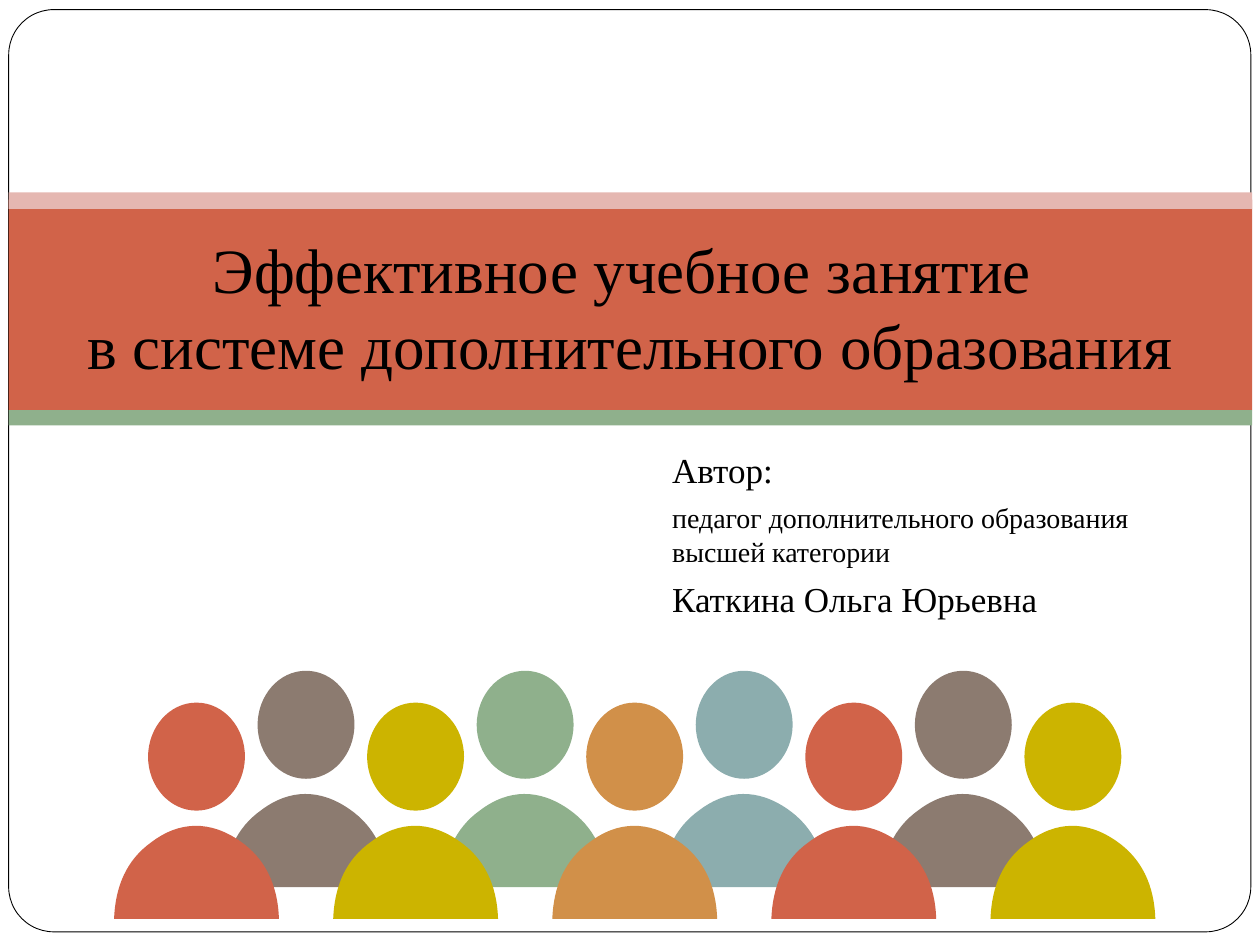
from lxml.etree import SubElement
from pptx import Presentation
from pptx.dml.color import RGBColor
from pptx.enum.shapes import MSO_SHAPE as Kind
from pptx.enum.text import MSO_ANCHOR as Anchor, MSO_AUTO_SIZE as Fit, PP_ALIGN as Align
from pptx.oxml.ns import qn
from pptx.util import Pt

FONT = "Times New Roman"
COLORS = {
    "black": "000000", "white": "FFFFFF", "red": "D16349", "pink": "E5B7B1",
    "green": "8FB08C", "blue": "8CADAE", "brown": "8C7B70",
    "yellow": "CCB400", "orange": "D19049",
}
BACK = ["brown", "green", "blue", "brown"]
FRONT = ["red", "yellow", "orange", "red", "yellow"]
STEP = 62.6  # half the gap between neighbours in one row
# Curves: a start, then two handles and an end for each cubic.
# The arch is measured from its lower left, the head from its upper left.
ARCH = [
    (0, 0), (0.7, -18.7), (7.2, -33.8), (21.4, -43.9),
    (37.6, -56.2), (55.1, -56.2), (71.8, -44.6),
    (86.4, -34.6), (93.6, -19.4), (94.2, 0),
    (62.8, 0), (31.4, 0), (0, 0),
]
HEAD = [
    (27.7, 61.7), (12.6, 61.7), (0, 48), (0, 30.8),
    (0.2, 14), (12.2, 0), (27.7, 0),
    (43.2, 0), (55.4, 14), (55.4, 31),
    (55.2, 48), (42.8, 61.7), (27.7, 61.7),
]


def rgb(name):
    return RGBColor.from_string(COLORS[name])


def paint(shape, color, line=None):
    shape.shadow.inherit = False
    shape.fill.solid()
    shape.fill.fore_color.rgb = rgb(color)
    if line:
        shape.line.color.rgb = rgb(line)
        shape.line.width = Pt(0.5)
    else:
        shape.line.fill.background()


def style(para, size):
    para.font.name = FONT
    para.font.size = Pt(size)
    para.font.color.rgb = rgb("black")


def add_frame(slide, x, y, w, h):
    frame = slide.shapes.add_shape(Kind.ROUNDED_RECTANGLE, Pt(x), Pt(y), Pt(w), Pt(h))
    frame.adjustments[0] = 0.049
    paint(frame, "white", "black")


def add_banner(slide, x, y, w, h):
    """Red band with a pink edge above, a green edge below and the title."""
    bands = [("red", 4, 120.4), ("pink", 0, 9.4), ("green", h - 8.8, 8.8)]
    for color, top, high in bands:
        band = slide.shapes.add_shape(Kind.RECTANGLE, Pt(x), Pt(y + top), Pt(w), Pt(high))
        paint(band, color)

    title = slide.shapes.title
    title.left, title.top, title.width, title.height = Pt(36), Pt(y + 8.8), Pt(648), Pt(116)
    frame = title.text_frame
    frame.text = "Эффективное учебное занятие \vв системе дополнительного образования"
    frame.word_wrap = True
    frame.auto_size = Fit.NONE
    frame.vertical_anchor = Anchor.MIDDLE
    frame.margin_left = frame.margin_right = frame.margin_bottom = Pt(7.2)
    frame.margin_top = Pt(3.6)
    para = frame.paragraphs[0]
    para.alignment = Align.CENTER
    style(para, 36)
    slide.shapes.element.append(title.element)  # bring in front of the bands


def add_author(slide, x, y, w, h):
    frame = slide.shapes.add_textbox(Pt(x), Pt(y), Pt(w), Pt(h)).text_frame
    frame.word_wrap = True
    lines = [
        ("Автор:", 20),
        ("педагог дополнительного образования высшей категории", 16),
        ("Каткина Ольга Юрьевна", 20),
    ]
    frame.text = "\n".join(text for text, _ in lines)
    for para, (_, size) in zip(frame.paragraphs, lines):
        para.space_before = Pt(5.8)
        style(para, size)


def add_curve(group, x, y, curve, color):
    """Closed outline whose points, after the first, are taken as cubics."""
    spots = [(Pt(x + px), Pt(y + py)) for px, py in curve]
    outline = group.shapes.build_freeform(*spots[0])
    outline.add_line_segments(spots[1:], close=False)
    shape = outline.convert_to_shape()
    route = next(shape.element.iter(qn("a:path")))
    lines = route.findall(qn("a:lnTo"))
    for i in range(0, len(lines), 3):
        cubic = SubElement(route, qn("a:cubicBezTo"))
        for line in lines[i:i + 3]:
            cubic.append(line[0])
            route.remove(line)
    SubElement(route, qn("a:close"))
    paint(shape, color)


def add_person(group, x, y, w, h, color):
    add_curve(group, x, y + h, ARCH, color)
    add_curve(group, x + (w - 55.4) / 2, y, HEAD, color)


def add_crowd(slide, x, y):
    """Two rows of people; the front one stands lower and half a gap aside."""
    group = slide.shapes.add_group_shape()
    for row, shift, drop in ((BACK, 1, 0), (FRONT, 0, 18.2)):
        for i, color in enumerate(row):
            add_person(group, x + (2 * i + shift) * STEP, y + drop, 94.2, 123.6, color)


def main():
    deck = Presentation()
    deck.slide_width, deck.slide_height = Pt(720), Pt(540)
    slide = deck.slides.add_slide(deck.slide_layouts[5])
    add_frame(slide, 5, 5.5, 709.8, 527)
    add_banner(slide, 5, 110, 710.5, 133.2)
    add_author(slide, 377, 252.7, 331, 113)
    add_crowd(slide, 65.2, 383.3)
    deck.save("out.pptx")


if __name__ == "__main__":
    main()
